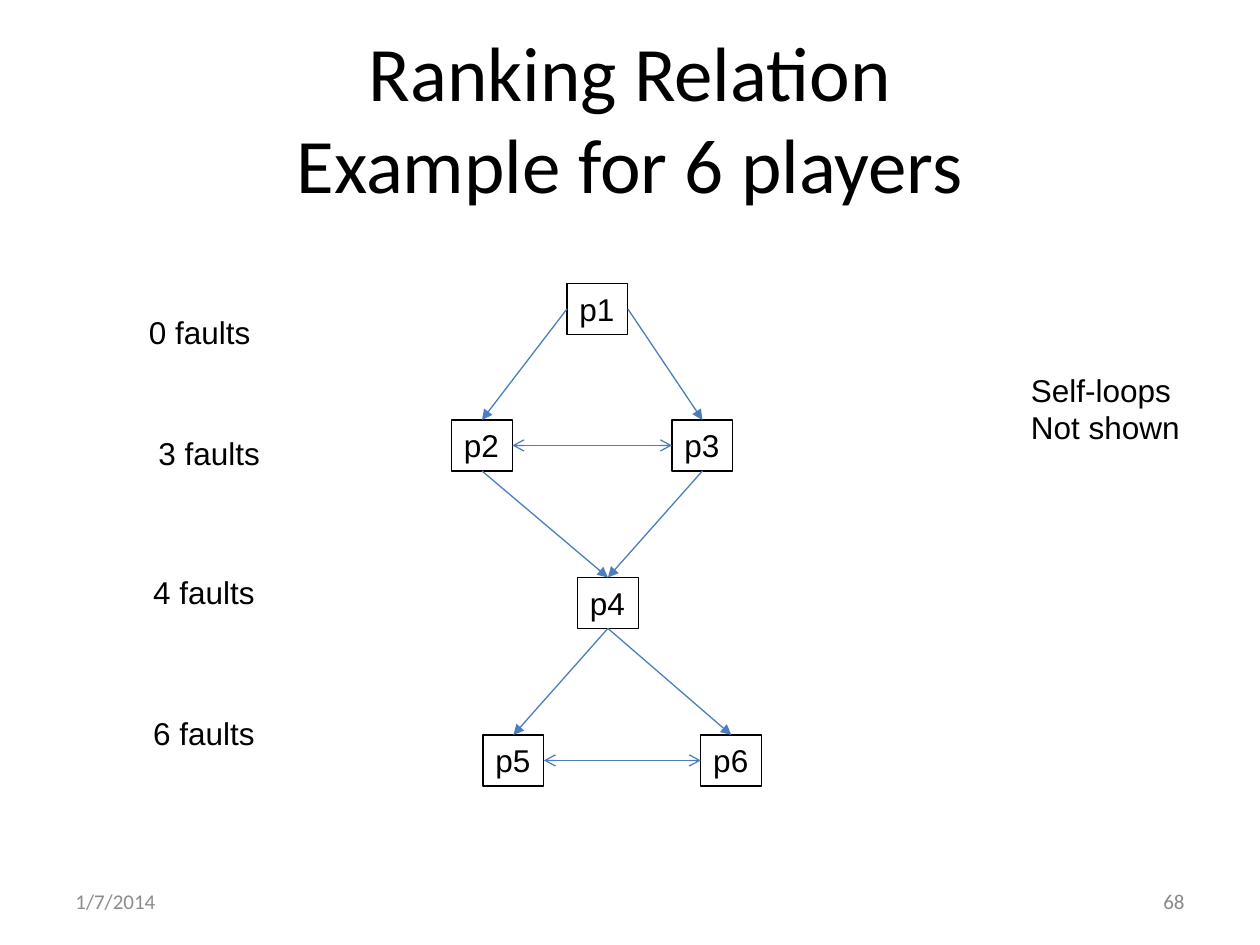
from lxml.etree import SubElement
from pptx import Presentation
from pptx.dml.color import RGBColor
from pptx.enum.shapes import MSO_CONNECTOR as Connector, MSO_SHAPE as Shape
from pptx.enum.text import MSO_ANCHOR as Anchor, MSO_AUTO_SIZE as AutoSize, PP_ALIGN as Align
from pptx.oxml.ns import qn
from pptx.util import Inches, Pt

presentation = Presentation()
presentation.slide_width = Inches(10)
presentation.slide_height = Inches(7.5)
slide = presentation.slides.add_slide(presentation.slide_layouts[6])

# The slide is a grid of 120 columns and 90 rows
COLUMN = presentation.slide_width / 120
ROW = presentation.slide_height / 90
TOP, LEFT, BOTTOM, RIGHT = range(4)


def color(hex_string):
    return RGBColor.from_string(hex_string)


def add_text(text, column, row, columns, rows, font="Arial", size=18, fill="000000",
             align=Align.LEFT, anchor=Anchor.TOP, wrap=False, boxed=False):
    """Add text at a grid position, in a thin black rectangle if boxed."""
    box = [int(column * COLUMN), int(row * ROW), int(columns * COLUMN), int(rows * ROW)]
    if boxed:
        shape = slide.shapes.add_shape(Shape.RECTANGLE, *box)
        shape.shadow.inherit = False
        shape.fill.background()
        shape.line.color.rgb = color("000000")
        shape.line.width = Pt(0.75)
    else:
        shape = slide.shapes.add_textbox(*box)
    frame = shape.text_frame
    frame.text = text
    frame.word_wrap = wrap
    frame.auto_size = AutoSize.NONE if wrap else AutoSize.SHAPE_TO_FIT_TEXT
    frame.vertical_anchor = anchor
    for paragraph in frame.paragraphs:
        paragraph.alignment = align
        for run in paragraph.runs:
            run.font.name = font
            run.font.size = Pt(size)
            run.font.color.rgb = color(fill)
    return shape


# Title and footer
calibri = dict(font="Calibri", anchor=Anchor.MIDDLE, wrap=True)
add_text("Ranking Relation\vExample for 6 players", 6, 3.6, 108, 15,
         size=44, align=Align.CENTER, **calibri)
add_text("1/7/2014", 6, 83.4, 28, 4.8, size=12, fill="8C8C8C", **calibri)
add_text("68", 86, 83.4, 28, 4.8, size=12, fill="898989", align=Align.RIGHT, **calibri)

# Players
positions = {"p1": (54, 27), "p2": (43, 40), "p3": (64, 40),
             "p4": (55, 55), "p5": (46, 70), "p6": (66.75, 70)}
players = {name: add_text(name, column, row, 5.8, 4.85, boxed=True)
           for name, (column, row) in positions.items()}

# Fault levels and remark
for text, column, row in [("0 faults", 13, 29.2), ("3 faults", 13.9, 40.7),
                          ("4 faults", 13.4, 54), ("6 faults", 13.4, 67.4)]:
    add_text(text, column, row, 12.2, 4.85)
add_text("Self-loops\nNot shown", 97, 34.7, 16.7, 8.5)

# Ranking: filled arrows point down, open double arrows join equal players
relations = [("p1", RIGHT, "p3", TOP), ("p1", LEFT, "p2", TOP),
             ("p2", RIGHT, "p3", LEFT), ("p2", BOTTOM, "p4", TOP),
             ("p3", BOTTOM, "p4", TOP), ("p5", RIGHT, "p6", LEFT),
             ("p4", BOTTOM, "p5", TOP), ("p4", BOTTOM, "p6", TOP)]
for start, start_side, end, end_side in relations:
    connector = slide.shapes.add_connector(Connector.STRAIGHT, 0, 0, 0, 0)
    connector.begin_connect(players[start], start_side)
    connector.end_connect(players[end], end_side)
    connector.line.color.rgb = color("4B7EBC")
    connector.line.width = Pt(0.75)
    line = connector.line._get_or_add_ln()
    if end_side == LEFT:
        SubElement(line, qn("a:headEnd"), type="arrow")
        SubElement(line, qn("a:tailEnd"), type="arrow")
    else:
        SubElement(line, qn("a:tailEnd"), type="triangle")
    SubElement(connector._element.spPr, qn("a:effectLst"))

presentation.save("out.pptx")
